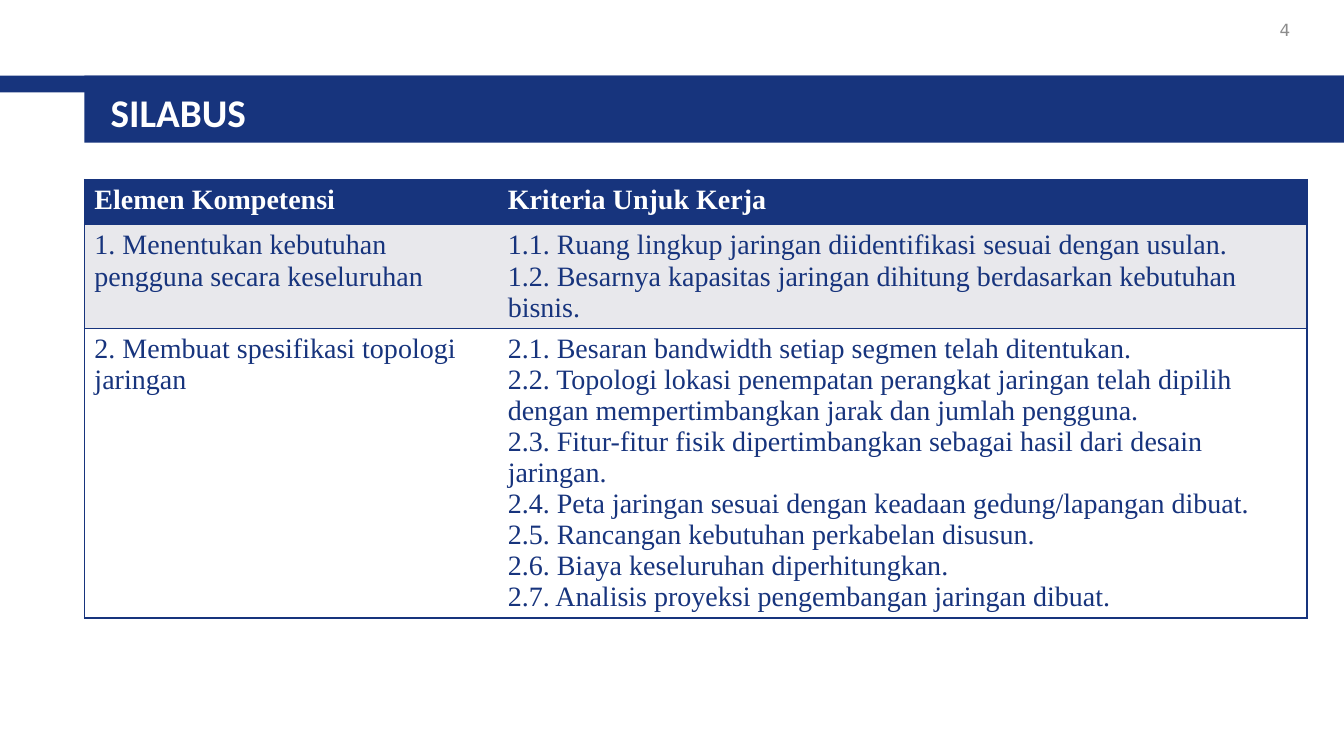
from dataclasses import dataclass

from lxml.etree import SubElement
from pptx import Presentation
from pptx.dml.color import RGBColor
from pptx.enum.shapes import MSO_SHAPE
from pptx.enum.text import MSO_ANCHOR, PP_ALIGN
from pptx.oxml.ns import qn
from pptx.util import Pt


@dataclass(frozen=True)
class Theme:
    navy: str = "17347D"
    pale: str = "E8E8EC"
    white: str = "FFFFFF"
    grey: str = "8C8C8C"
    head: str = "Calibri"
    body: str = "Times New Roman"
    page: str = "DejaVu Sans"
    big: int = 28
    mid: int = 20
    small: int = 12


THEME = Theme()
LEFT, TOP = 60.3, 54
WIDE, HIGH = 960, 540
COLS = (295.2, 578.1)
ROWS = (32.4, 72.7, 200.9)
FILLS = (THEME.navy, THEME.pale, THEME.white)

CELLS = (
    (("Elemen Kompetensi",), ("Kriteria Unjuk Kerja",)),
    (
        ("1. Menentukan kebutuhan", "pengguna secara keseluruhan"),
        (
            "1.1. Ruang lingkup jaringan diidentifikasi sesuai dengan usulan.",
            "1.2. Besarnya kapasitas jaringan dihitung berdasarkan kebutuhan bisnis.",
        ),
    ),
    (
        ("2. Membuat spesifikasi topologi", "jaringan"),
        (
            "2.1. Besaran bandwidth setiap segmen telah ditentukan.",
            "2.2. Topologi lokasi penempatan perangkat jaringan telah dipilih "
            "dengan mempertimbangkan jarak dan jumlah pengguna.",
            "2.3. Fitur-fitur fisik dipertimbangkan sebagai hasil dari desain jaringan.",
            "2.4. Peta jaringan sesuai dengan keadaan gedung/lapangan dibuat.",
            "2.5. Rancangan kebutuhan perkabelan disusun.",
            "2.6. Biaya keseluruhan diperhitungkan.",
            "2.7. Analisis proyeksi pengembangan jaringan dibuat.",
        ),
    ),
)


def write(frame, lines, color, align=PP_ALIGN.LEFT, **style):
    for i, line in enumerate(lines):
        para = frame.paragraphs[0] if i == 0 else frame.add_paragraph()
        para.alignment = align
        run = para.add_run()
        run.text = line
        for key, value in style.items():
            setattr(run.font, key, value)
        run.font.color.rgb = RGBColor.from_string(color)


def add_bar(slide, *place):
    bar = slide.shapes.add_shape(MSO_SHAPE.RECTANGLE, *map(Pt, place))
    bar.shadow.inherit = False
    bar.fill.solid()
    bar.fill.fore_color.rgb = RGBColor.from_string(THEME.navy)
    bar.line.fill.background()


def add_label(slide, place, text, anchor, **style):
    frame = slide.shapes.add_textbox(*map(Pt, place)).text_frame
    frame.word_wrap = True
    frame.vertical_anchor = anchor
    write(frame, [text], **style)


def set_edges(cell, shown):
    """Draw the sides named in shown (L, R, T, B) and clear the others."""
    props = cell._tc.get_or_add_tcPr()
    for side in "LRTB":
        line = SubElement(props, qn(f"a:ln{side}"), w=str(Pt(1)))
        if side in shown:
            fill = SubElement(line, qn("a:solidFill"))
            SubElement(fill, qn("a:srgbClr"), val=THEME.navy)
        else:
            SubElement(line, qn("a:noFill"))


def add_grid(slide):
    place = (LEFT, 128.2, sum(COLS), sum(ROWS))
    table = slide.shapes.add_table(len(ROWS), len(COLS), *map(Pt, place)).table
    table.horz_banding = False
    for col, width in zip(table.columns, COLS):
        col.width = Pt(width)
    for r, (row, height) in enumerate(zip(table.rows, ROWS)):
        row.height = Pt(height)
        for c, cell in enumerate(row.cells):
            set_edges(cell, ("LTB", "RTB")[c])
            cell.fill.solid()
            cell.fill.fore_color.rgb = RGBColor.from_string(FILLS[r])
            write(cell.text_frame, CELLS[r][c],
                  THEME.white if r == 0 else THEME.navy,
                  name=THEME.body, size=Pt(THEME.mid), bold=r == 0)


def main():
    deck = Presentation()
    deck.slide_width, deck.slide_height = Pt(WIDE), Pt(HIGH)
    slide = deck.slides.add_slide(deck.slide_layouts[6])
    add_bar(slide, 0, TOP, WIDE, 12)
    add_bar(slide, LEFT, TOP, WIDE - LEFT, 48)
    add_grid(slide)
    add_label(slide, (72, 57.6, 856, 44.6), "SILABUS", MSO_ANCHOR.MIDDLE,
              color=THEME.white, name=THEME.head, size=Pt(THEME.big), bold=True)
    add_label(slide, (712.8, 10.8, 216, 28.8), "4", MSO_ANCHOR.TOP,
              color=THEME.grey, align=PP_ALIGN.RIGHT,
              name=THEME.page, size=Pt(THEME.small))
    deck.save("out.pptx")


if __name__ == "__main__":
    main()
